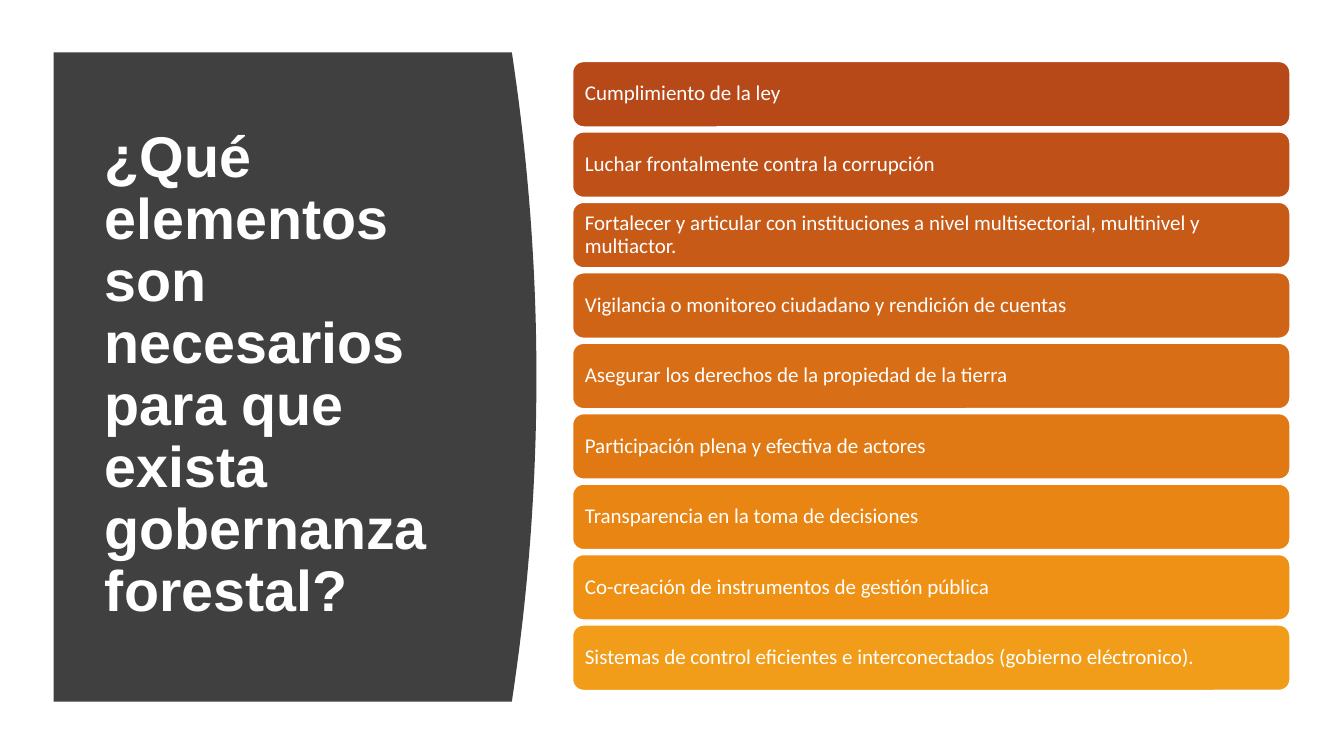
import pptx
import pptx.dml.color
import pptx.enum.shapes
import pptx.enum.text
import pptx.util
from pptx.util import Cm

RGBColor = pptx.dml.color.RGBColor
WHITE = RGBColor(0xFF, 0xFF, 0xFF)
CHARCOAL = RGBColor(0x40, 0x40, 0x40)

HEADING = "¿Qué elementos son necesarios para que exista gobernanza forestal?"
ELEMENTS = [
    ("Cumplimiento de la ley", RGBColor(0xB7, 0x49, 0x19)),
    ("Luchar frontalmente contra la corrupción", RGBColor(0xBF, 0x51, 0x18)),
    ("Fortalecer y articular con instituciones a nivel multisectorial, "
     "multinivel y multiactor.", RGBColor(0xC7, 0x5A, 0x17)),
    ("Vigilancia o monitoreo ciudadano y rendición de cuentas",
     RGBColor(0xD0, 0x64, 0x16)),
    ("Asegurar los derechos de la propiedad de la tierra",
     RGBColor(0xD8, 0x6E, 0x15)),
    ("Participación plena y efectiva de actores", RGBColor(0xE0, 0x79, 0x14)),
    ("Transparencia en la toma de decisiones", RGBColor(0xE9, 0x85, 0x12)),
    ("Co-creación de instrumentos de gestión pública",
     RGBColor(0xEF, 0x91, 0x14)),
    ("Sistemas de control eficientes e interconectados (gobierno eléctronico).",
     RGBColor(0xF1, 0x9D, 0x19)),
]


class SlideBuilder:
    """Holds the text style and the current slide."""

    heading_font, heading_size = "Arial", 41
    body_font, body_size = "Calibri", 15

    def __init__(self, deck):
        self.page = deck.slides.add_slide(deck.slide_layouts[5])

    def set_text(self, shape, text, font, size, bold=False):
        frame = shape.text_frame
        frame.text = text
        frame.word_wrap = True
        frame.auto_size = pptx.enum.text.MSO_AUTO_SIZE.NONE
        frame.vertical_anchor = pptx.enum.text.MSO_ANCHOR.MIDDLE
        para = frame.paragraphs[0]
        para.alignment = pptx.enum.text.PP_ALIGN.LEFT
        para.line_spacing = 0.9
        para.font.name = font
        para.font.size = pptx.util.Pt(size)
        para.font.bold = bold
        para.font.color.rgb = WHITE

    def title(self, text, left, top, width, height):
        box = self.page.shapes.title
        box.left, box.top = Cm(left), Cm(top)
        box.width, box.height = Cm(width), Cm(height)
        self.set_text(box, text, self.heading_font, self.heading_size, bold=True)

    def curved_panel(self, left, top, width, height, bulge, steps=40):
        """Panel whose right edge bows outward as a parabola."""
        edge = []
        for step in range(steps + 1):
            share = step / steps
            bow = bulge * (1 - (2 * share - 1) ** 2)
            edge.append((Cm(left + width + bow), Cm(top + height * share)))
        outline = self.page.shapes.build_freeform(Cm(left), Cm(top))
        outline.add_line_segments(edge + [(Cm(left), Cm(top + height))])
        panel = outline.convert_to_shape()
        panel.shadow.inherit = False
        panel.fill.solid()
        panel.fill.fore_color.rgb = CHARCOAL
        panel.line.fill.background()
        # Keep the panel behind the title
        self.page.shapes.title.element.addprevious(panel.element)

    def bar(self, text, color, left, top, width, height):
        box = self.page.shapes.add_shape(
            pptx.enum.shapes.MSO_SHAPE.ROUNDED_RECTANGLE,
            Cm(left), Cm(top), Cm(width), Cm(height))
        box.shadow.inherit = False
        box.fill.solid()
        box.fill.fore_color.rgb = color
        box.line.color.rgb = WHITE
        box.line.width = pptx.util.Pt(1)
        frame = box.text_frame
        frame.margin_left = frame.margin_right = Cm(0.23)
        frame.margin_top = frame.margin_bottom = Cm(0.15)
        self.set_text(box, text, self.body_font, self.body_size)


def main():
    deck = pptx.Presentation()
    deck.slide_width, deck.slide_height = Cm(33.87), Cm(19.05)
    builder = SlideBuilder(deck)

    # Question on the dark panel
    builder.curved_panel(1.35, 1.32, 11.55, 16.36, bulge=0.62)
    builder.title(HEADING, 2.39, 2.82, 9.5, 13.31)

    # Evenly spaced bars, one per element
    first_top, last_top = 1.55, 15.75
    pitch = (last_top - first_top) / (len(ELEMENTS) - 1)
    for row, (text, color) in enumerate(ELEMENTS):
        builder.bar(text, color, 14.43, first_top + row * pitch, 18.08, 1.65)

    deck.save("out.pptx")


if __name__ == "__main__":
    main()
